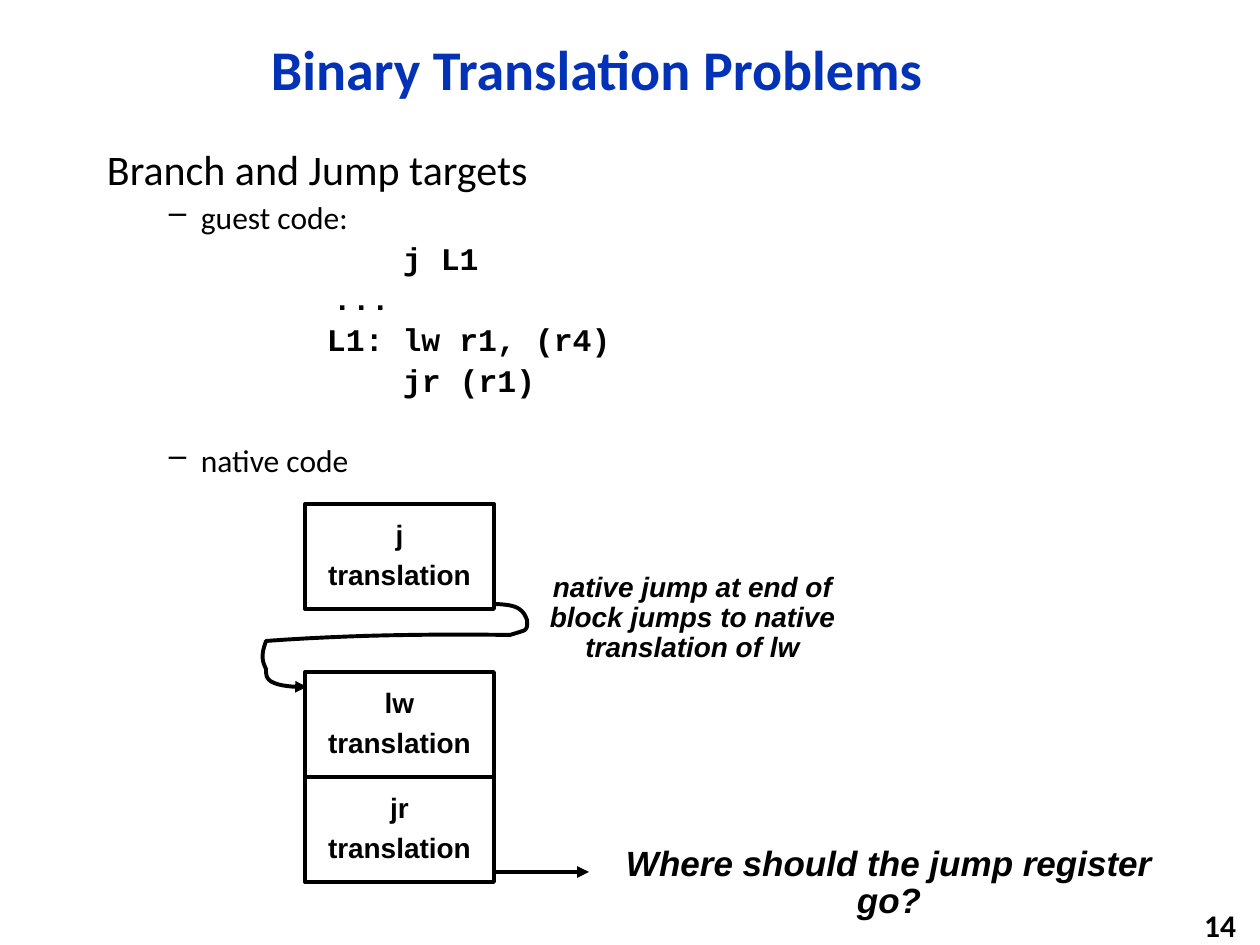
from lxml import etree
from pptx import Presentation
from pptx.dml.color import RGBColor
from pptx.enum.shapes import MSO_CONNECTOR, MSO_SHAPE
from pptx.enum.text import MSO_ANCHOR, PP_ALIGN
from pptx.oxml.ns import qn
from pptx.util import Emu, Pt

PX = 914400 / 126
LEFT, CENTER, RIGHT = PP_ALIGN.LEFT, PP_ALIGN.CENTER, PP_ALIGN.RIGHT
TOP, MIDDLE = MSO_ANCHOR.TOP, MSO_ANCHOR.MIDDLE
COLORS = {"title": "0332B7", "ink": "000000"}
LINE_WIDTH = Pt(2.25)


def px(n):
    return Emu(round(n * PX))


def rgb(name):
    return RGBColor.from_string(COLORS[name])


def set_frame(s, anchor=TOP, inset=13):
    tf = s.text_frame
    tf.word_wrap = True
    tf.vertical_anchor = anchor
    tf.margin_left = tf.margin_right = px(inset)
    tf.margin_top = tf.margin_bottom = px(6)
    return tf


def add_frame(slide, box, **frame):
    return set_frame(slide.shapes.add_textbox(*map(px, box)), **frame)


def add_text(tf, text, size=18, font="Calibri", color="ink", bold=False, italic=False,
             align=LEFT, spacing=0.9, before=0, margin=0, indent=0, bullet=None):
    """Add one paragraph, filling the first empty one if there is one."""
    p = tf.paragraphs[-1]
    if p.runs:
        p = tf.add_paragraph()
    p.alignment, p.line_spacing, p.space_before = align, spacing, Pt(before)
    pPr = p._p.get_or_add_pPr()
    pPr.set("marL", str(px(margin)))
    pPr.set("indent", str(px(indent)))
    if bullet:
        etree.SubElement(pPr, qn("a:buChar")).set("char", bullet)
    r = p.add_run()
    r.text = text
    f = r.font
    f.size, f.name, f.bold, f.italic = Pt(size), font, bold, italic
    f.color.rgb = rgb(color)


def style_line(s, arrow=False):
    s.line.color.rgb = rgb("ink")
    s.line.width = LINE_WIDTH
    if arrow:
        etree.SubElement(s.line._get_or_add_ln(), qn("a:tailEnd")).set("type", "triangle")


def add_code_list(slide, box):
    tf = add_frame(slide, box)
    item = dict(spacing=0.8, margin=94, indent=-32, bullet="–")
    add_text(tf, "Branch and Jump targets", size=24, spacing=0.8, before=8.8)
    add_text(tf, "guest code:", before=6.6, **item)
    code = [("j L1", 296), ("...", 226), ("L1: lw r1, (r4)", 220), ("jr (r1)", 296)]
    for text, margin in code:
        add_text(tf, text, font="Courier New", bold=True, spacing=0.8, before=6.1, margin=margin)
    add_text(tf, "native code", before=28, **item)


def add_block(slide, box, name):
    s = slide.shapes.add_shape(MSO_SHAPE.RECTANGLE, *map(px, box))
    s.shadow.inherit = False
    s.fill.background()
    style_line(s)
    tf = set_frame(s, anchor=MIDDLE)
    for text in (name, "translation"):
        add_text(tf, text, size=16, font="Arial", bold=True, align=CENTER, before=5.5)


def bezier(p0, p1, p2, p3, steps=12):
    """Return the points of a cubic curve after its start."""
    points = []
    for i in range(1, steps + 1):
        t = i / steps
        u = 1 - t
        weights = (u ** 3, 3 * u * u * t, 3 * u * t * t, t ** 3)
        points.append(tuple(sum(w * p[axis] for w, p in zip(weights, (p0, p1, p2, p3)))
                            for axis in (0, 1)))
    return points


def add_jump_curve(slide, x, y):
    start = (0, 0)
    curves = [
        ((15, 1), (27, 1), (32, 16)),
        ((32, 20), (33, 23), (30, 26)),
        ((29, 27), (18, 30), (15, 31)),
        ((-69, 30), (-145, 31), (-229, 37)),
        ((-233, 49), (-234, 55), (-229, 65)),
        ((-229, 67), (-229, 70), (-228, 73)),
        ((-224, 84), (-191, 83), (-188, 83)),
    ]
    points = []
    for curve in curves:
        points += bezier(start, *curve)
        start = curve[-1]
    fb = slide.shapes.build_freeform(px(x), px(y))
    fb.add_line_segments([(px(x + dx), px(y + dy)) for dx, dy in points], close=False)
    s = fb.convert_to_shape()
    s.shadow.inherit = False
    s.fill.background()
    style_line(s, arrow=True)


def add_arrow(slide, x, y, length):
    s = slide.shapes.add_connector(MSO_CONNECTOR.STRAIGHT, px(x), px(y), px(x + length), px(y))
    style_line(s, arrow=True)
    etree.SubElement(s._element.spPr, qn("a:effectLst"))


def add_native_code(slide, x, y):
    width, height = 189, 105
    for name, dy in (("j", 0), ("lw", 168), ("jr", 168 + height)):
        add_block(slide, (x, y + dy, width, height), name)
    add_jump_curve(slide, x + width + 1, y + 100)
    add_arrow(slide, x + width, y + 368, 95)
    note = dict(font="Arial", bold=True, italic=True, align=CENTER)
    tf = add_frame(slide, (x + 209, y + 63, 357, 103))
    add_text(tf, "native jump at end of block jumps to native translation of lw",
             size=16, before=5.5, **note)
    tf = add_frame(slide, (x + 272, y + 336, 624, 50), inset=20)
    add_text(tf, "Where should the jump register go?", size=20, before=6.9, **note)


def main():
    prs = Presentation()
    prs.slide_width, prs.slide_height = px(1260), px(945)
    slide = prs.slides.add_slide(prs.slide_layouts[6])
    tf = add_frame(slide, (94, 21, 1006, 102), anchor=MIDDLE)
    add_text(tf, "Binary Translation Problems", size=32, color="title", bold=True, align=CENTER)
    add_code_list(slide, (94, 147, 1134, 357))
    add_native_code(slide, 305, 504)
    tf = add_frame(slide, (987, 905, 262, 40), anchor=MIDDLE)
    add_text(tf, "14", bold=True, align=RIGHT, spacing=1.0)
    prs.save("out.pptx")


if __name__ == "__main__":
    main()
